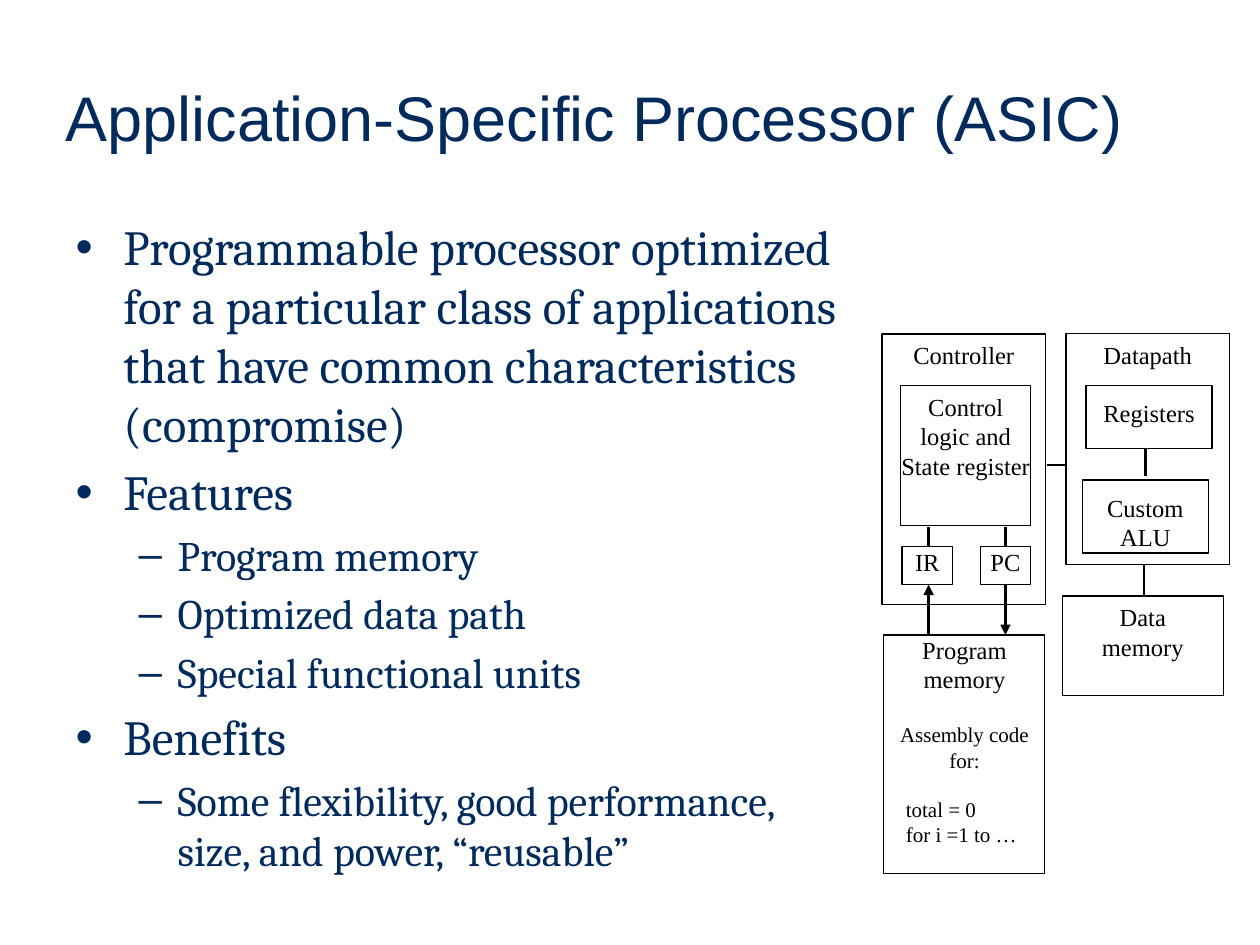
from pptx import Presentation
from pptx.dml.color import RGBColor
from pptx.enum.shapes import MSO_CONNECTOR as Connector, MSO_SHAPE as Shape
from pptx.enum.text import MSO_ANCHOR as Anchor, MSO_AUTO_SIZE as AutoSize, PP_ALIGN as Align
from pptx.oxml.ns import qn
from pptx.util import Inches, Pt
from lxml.etree import SubElement

NAVY, BLACK = "002B5C", "000000"
TITLE_FONT, BODY_FONT, DIAGRAM_FONT = "Arial", "Cambria", "Times New Roman"
# Per list level: bullet, text size, left margin, first-line indent
LEVELS = [("•", 28, 0.38, -0.38), ("–", 24, 0.81, -0.31)]


def color(value):
    return RGBColor.from_string(value)


class SlideBuilder:
    def __init__(self, slide):
        self.slide = slide

    def place(self, shape, bounds):
        for name, value in zip(("left", "top", "width", "height"), bounds):
            setattr(shape, name, Inches(value))

    def style(self, paragraph, font, size, text_color, **formats):
        for name, value in formats.items():
            setattr(paragraph, name, value)
        for name, value in {"name": font, "size": Pt(size)}.items():
            setattr(paragraph.font, name, value)
        paragraph.font.color.rgb = color(text_color)

    def indent(self, paragraph, left, first=0):
        properties = paragraph._p.get_or_add_pPr()
        properties.set("marL", str(Inches(left)))
        properties.set("indent", str(Inches(first)))
        return properties

    def frame(self, shape, insets=(0.1, 0.05, 0.1, 0.05), anchor=Anchor.TOP):
        formats = {"word_wrap": True, "auto_size": AutoSize.NONE, "vertical_anchor": anchor}
        sides = ("margin_left", "margin_top", "margin_right", "margin_bottom")
        formats.update(zip(sides, map(Inches, insets)))
        for name, value in formats.items():
            setattr(shape.text_frame, name, value)
        return shape.text_frame

    def paragraphs(self, frame, lines):
        for index, line in enumerate(lines):
            paragraph = frame.paragraphs[0] if index == 0 else frame.add_paragraph()
            paragraph.text = line
            yield paragraph

    def title(self, text, bounds):
        shape = self.slide.shapes.title
        self.place(shape, bounds)
        frame = self.frame(shape, anchor=Anchor.MIDDLE)
        for paragraph in self.paragraphs(frame, [text]):
            self.style(paragraph, TITLE_FONT, 36, NAVY, alignment=Align.LEFT)

    def bullets(self, items, bounds):
        shape = self.slide.placeholders[1]
        self.place(shape, bounds)
        lines = self.paragraphs(self.frame(shape), [text for _, text in items])
        for index, (paragraph, (level, _)) in enumerate(zip(lines, items)):
            bullet, size, left, first = LEVELS[level]
            properties = self.indent(paragraph, left, first)
            SubElement(properties, qn("a:buChar")).set("char", bullet)
            self.style(paragraph, BODY_FONT, size, NAVY, level=level,
                       space_before=Pt(0.2 * size if index else 0))

    def box(self, bounds, lines=(), insets=(0, 0.05, 0, 0.05)):
        shape = self.slide.shapes.add_shape(Shape.RECTANGLE, *map(Inches, bounds))
        shape.shadow.inherit = False
        shape.fill.background()
        shape.line.color.rgb = color(BLACK)
        shape.line.width = Pt(0.75)
        for paragraph in self.paragraphs(self.frame(shape, insets), lines):
            self.style(paragraph, DIAGRAM_FONT, 14, BLACK, alignment=Align.CENTER)

    def label(self, bounds, lines, size):
        shape = self.slide.shapes.add_textbox(*map(Inches, bounds))
        lines = self.paragraphs(self.frame(shape, (0, 0.05, 0, 0.05)), lines)
        for paragraph in lines:
            self.style(paragraph, DIAGRAM_FONT, size, BLACK, alignment=Align.CENTER)
        return shape.text_frame.paragraphs

    def line(self, start, end, arrow=False):
        connector = self.slide.shapes.add_connector(
            Connector.STRAIGHT, *map(Inches, (*start, *end)))
        connector.line.color.rgb = color(BLACK)
        connector.line.width = Pt(1.5)
        if arrow:
            SubElement(connector.line._get_or_add_ln(), qn("a:tailEnd")).set("type", "triangle")
        SubElement(connector._element.spPr, qn("a:effectLst"))


def main():
    presentation = Presentation()
    presentation.slide_width, presentation.slide_height = Inches(10), Inches(7.5)
    builder = SlideBuilder(presentation.slides.add_slide(presentation.slide_layouts[1]))

    # Title and list
    builder.title("Application-Specific Processor (ASIC)", (0.42, 0.42, 9.08, 1))
    builder.bullets([
        (0, "Programmable processor optimized for a particular class of applications "
            "that have common characteristics (compromise)"),
        (0, "Features"),
        (1, "Program memory"),
        (1, "Optimized data path"),
        (1, "Special functional units"),
        (0, "Benefits"),
        (1, "Some flexibility, good performance, size, and power, “reusable”"),
    ], (0.5, 1.67, 6.36, 5.03))

    # Controller
    builder.box((7, 2.65, 1.3, 2.15), ["Controller"])
    builder.box((7.15, 3.06, 1.03, 1.11), ["Control", "logic and State register"],
                (0, 0.05, 0, 0))
    for name, left in (("IR", 7.16), ("PC", 7.78)):
        builder.box((left, 4.34, 0.4, 0.3), [name], (0, 0, 0, 0))

    # Datapath
    builder.box((8.46, 2.65, 1.3, 1.83), ["Datapath"])
    builder.box((8.62, 3.06, 1, 0.5), ["Registers"], (0, 0.1, 0, 0.05))
    builder.box((8.59, 3.81, 1, 0.58), ["Custom", "ALU"], (0, 0.1, 0, 0.05))

    # Memories
    builder.box((8.43, 4.73, 1.28, 0.79), ["Data", "memory"])
    builder.box((7.01, 5.04, 1.28, 1.89))
    builder.label((7.01, 4.99, 1.29, 0.38), ["Program memory"], 14)
    _, *code = builder.label((7.11, 5.68, 1.09, 0.8),
                             ["Assembly code for:", "total = 0", "for i =1 to …"], 12)
    for paragraph in code:
        paragraph.alignment = Align.LEFT
        builder.indent(paragraph, 0.08)
    code[0].space_before = Pt(14)

    # Links between the blocks
    for start, end in (
        ((8.31, 3.69), (8.45, 3.69)),
        ((9.09, 3.56), (9.09, 3.78)),
        ((9.08, 4.48), (9.08, 4.74)),
    ):
        builder.line(start, end)
    for x, tail, head in ((7.37, 5.04, 4.64), (7.98, 4.64, 5.04)):
        builder.line((x, 4.18), (x, 4.33))
        builder.line((x, tail), (x, head), arrow=True)

    presentation.save("out.pptx")


if __name__ == "__main__":
    main()
